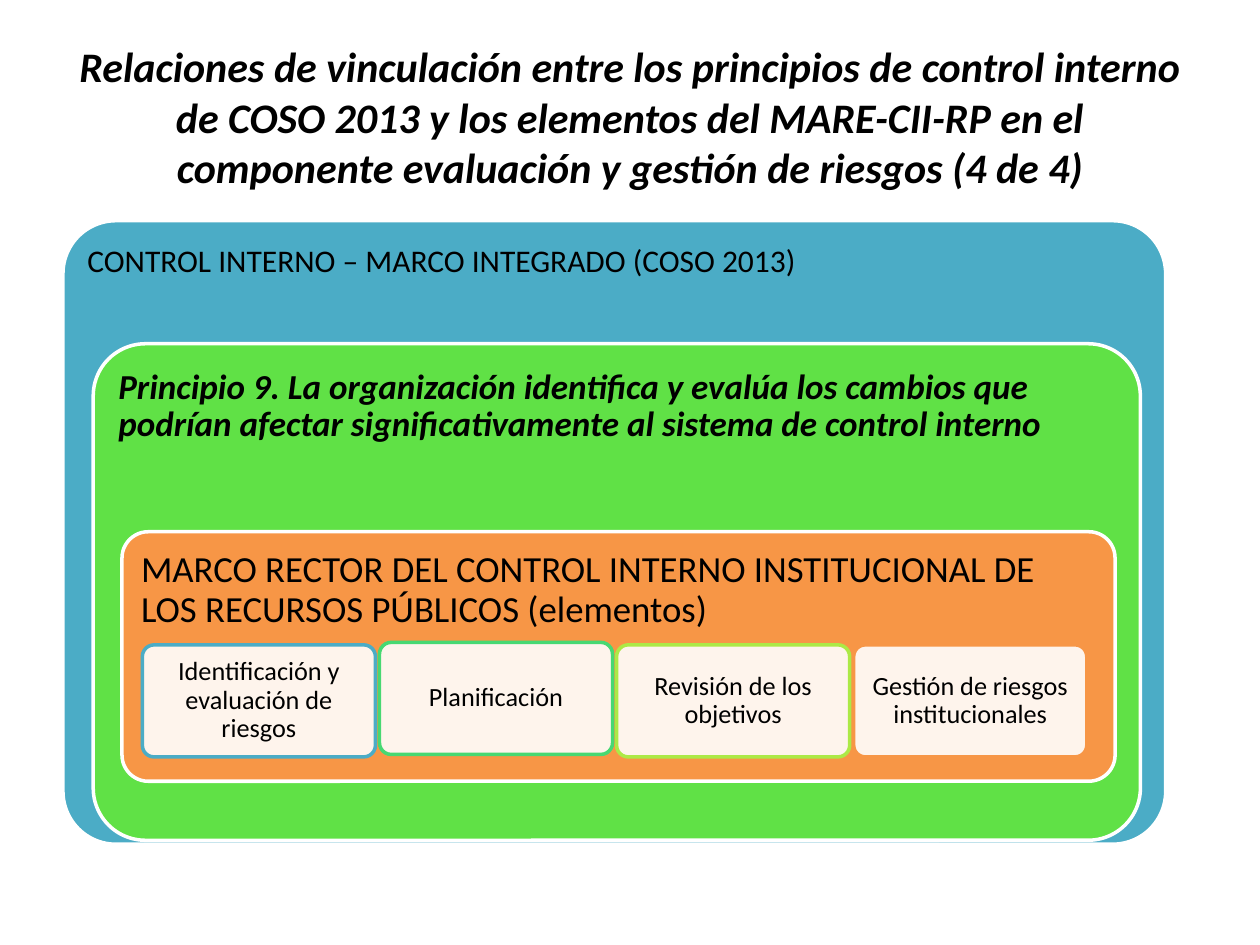
from dataclasses import dataclass

from lxml.etree import SubElement
from pptx import Presentation
from pptx.dml.color import RGBColor
from pptx.enum.shapes import MSO_SHAPE as Shape
from pptx.enum.text import MSO_ANCHOR as Anchor, MSO_AUTO_SIZE as AutoSize, PP_ALIGN as Align
from pptx.oxml.ns import qn
from pptx.util import Cm, Pt


@dataclass(frozen=True)
class Theme:
    font: str = "Calibri"
    text: str = "000000"
    white: str = "FFFFFF"
    blue: str = "4BACC6"
    green: str = "60E146"
    orange: str = "F79646"
    card_lines: tuple = ("4BACC6", "47D872", "ACE946", "F79646")
    card_opacity: int = 90
    title_size: int = 24
    framework_size: int = 18
    principle_size: int = 20
    elements_size: int = 21
    card_size: int = 15
    line_width: int = 2


class SlideBuilder:
    def __init__(self, slide, theme):
        self.slide = slide
        self.theme = theme

    def set_text(self, shape, text, size, align, anchor, emphasis=False, inset=0.25):
        frame = shape.text_frame
        frame.word_wrap = True
        frame.auto_size = AutoSize.NONE
        frame.vertical_anchor = anchor
        frame.margin_left = frame.margin_right = Cm(inset)
        frame.margin_top = frame.margin_bottom = Cm(inset)
        paragraph = frame.paragraphs[0]
        paragraph.text = text
        paragraph.alignment = align
        font = paragraph.font
        font.name = self.theme.font
        font.size = Pt(size)
        font.bold = font.italic = emphasis
        font.color.rgb = RGBColor.from_string(self.theme.text)
        return paragraph

    def title(self, text, box):
        shape = self.slide.shapes.title
        shape.left, shape.top, shape.width, shape.height = map(Cm, box)
        self.set_text(shape, text, self.theme.title_size, Align.CENTER, Anchor.MIDDLE, emphasis=True)

    def rounded_box(self, box, corner, fill, line):
        shape = self.slide.shapes.add_shape(Shape.ROUNDED_RECTANGLE, *map(Cm, box))
        shape.adjustments[0] = corner
        shape.shadow.inherit = False
        shape.fill.solid()
        shape.fill.fore_color.rgb = RGBColor.from_string(fill)
        shape.line.color.rgb = RGBColor.from_string(line)
        shape.line.width = Pt(self.theme.line_width)
        return shape

    def panel(self, text, box, fill, size, inset, corner=0.105, emphasis=False):
        shape = self.rounded_box(box, corner, fill, self.theme.white)
        paragraph = self.set_text(shape, text, size, Align.LEFT, Anchor.TOP, emphasis, inset)
        paragraph.line_spacing = 0.9

    def card(self, text, box, line):
        """Add a translucent white box with centred text."""
        shape = self.rounded_box(box, 0.105, self.theme.white, line)
        color = shape.element.spPr.find(qn("a:solidFill"))[0]
        SubElement(color, qn("a:alpha"), val=str(self.theme.card_opacity * 1000))
        paragraph = self.set_text(shape, text, self.theme.card_size, Align.CENTER, Anchor.MIDDLE, inset=0.15)
        paragraph.line_spacing = 0.9


def main():
    theme = Theme()
    presentation = Presentation()
    presentation.slide_width, presentation.slide_height = Cm(25.4), Cm(19.05)
    title_only = presentation.slide_layouts[5]
    builder = SlideBuilder(presentation.slides.add_slide(title_only), theme)

    builder.title(
        "Relaciones de vinculación entre los principios de control interno de COSO 2013 "
        "y los elementos del MARE-CII-RP en el componente evaluación y gestión de riesgos (4 de 4)",
        (1.27, 0.76, 22.86, 3.18),
    )
    builder.panel(
        "CONTROL INTERNO – MARCO INTEGRADO (COSO 2013)",
        (1.27, 4.45, 22.23, 12.57), theme.blue, theme.framework_size, inset=0.18, corner=0.085,
    )
    builder.panel(
        "Principio 9. La organización identifica y evalúa los cambios que podrían afectar "
        "significativamente al sistema de control interno",
        (1.88, 6.93, 21.11, 10.01), theme.green, theme.principle_size, inset=0.2, emphasis=True,
    )
    builder.panel(
        "MARCO RECTOR DEL CONTROL INTERNO INSTITUCIONAL DE LOS RECURSOS PÚBLICOS (elementos)",
        (2.46, 10.72, 20.02, 5.03), theme.orange, theme.elements_size, inset=0.23,
    )

    elements = (
        ("Identificación y evaluación de riesgos", 13.0),
        ("Planificación", 12.95),
        ("Revisión de los objetivos", 13.0),
        ("Gestión de riesgos institucionales", 13.0),
    )
    first_left, pitch, width, height = 2.87, 4.78, 4.7, 2.26
    for index, ((text, top), line) in enumerate(zip(elements, theme.card_lines)):
        builder.card(text, (first_left + index * pitch, top, width, height), line)

    presentation.save("out.pptx")


if __name__ == "__main__":
    main()
